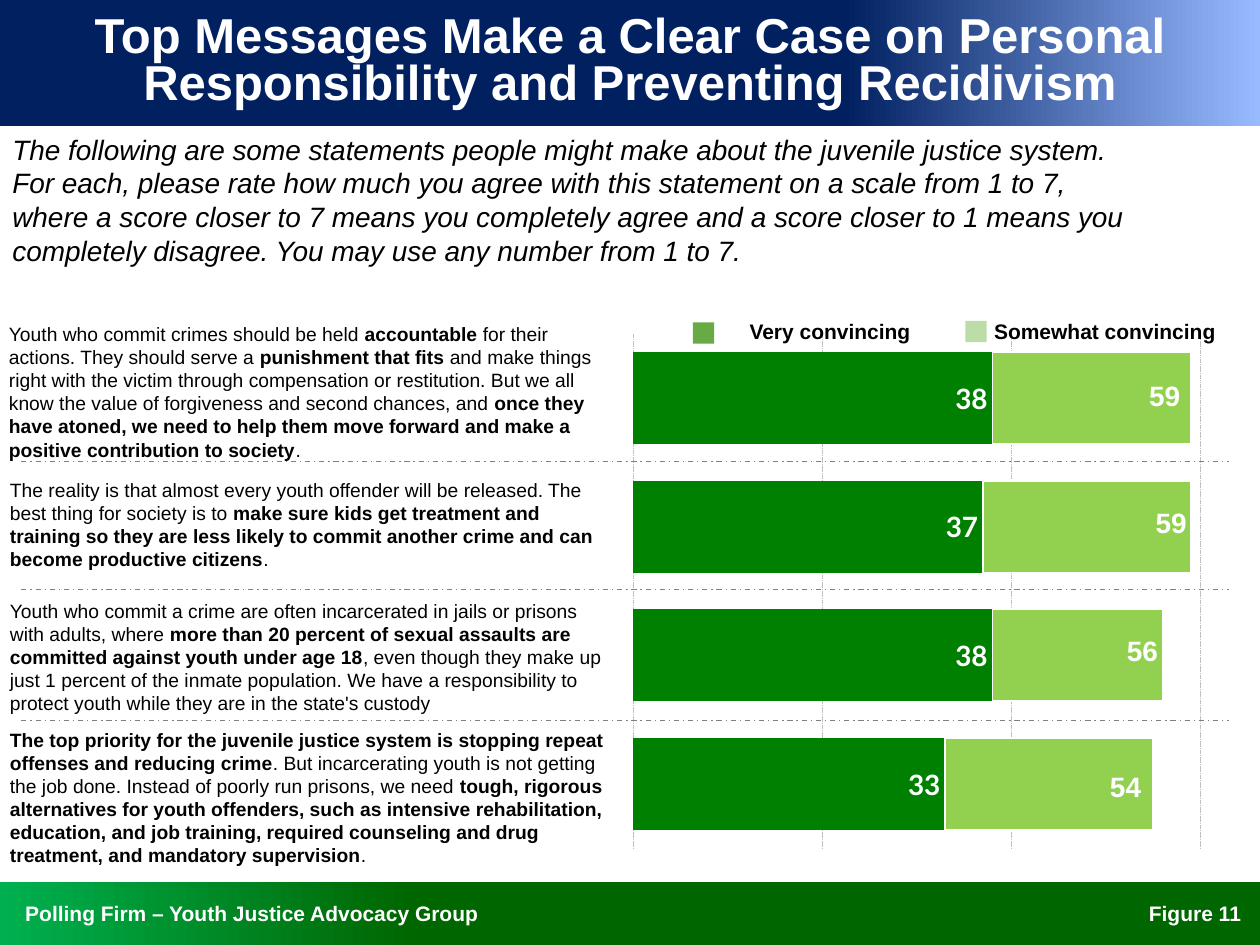
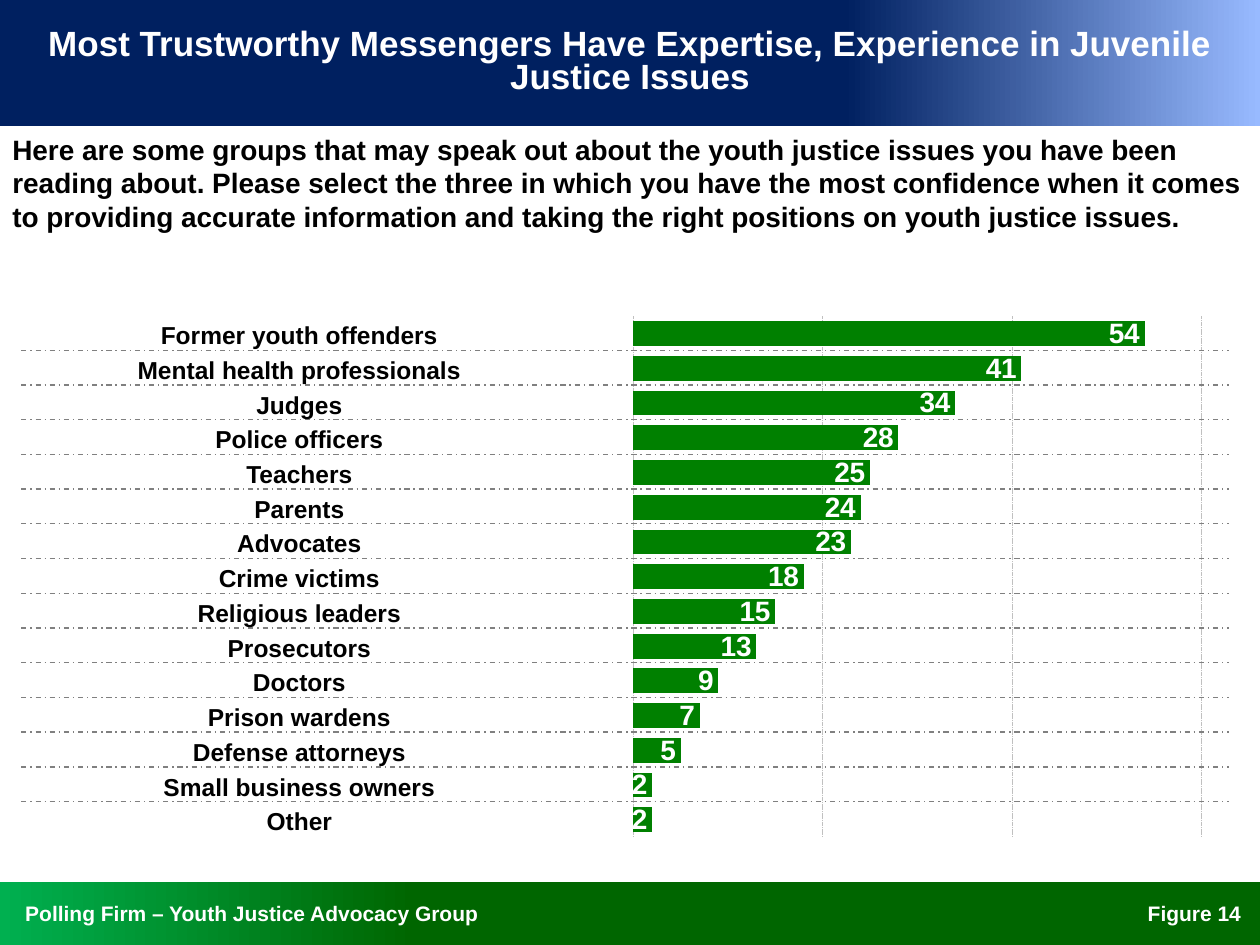
"""Build two survey result slides on youth justice messages and messengers."""
from lxml import etree
from pptx import Presentation
from pptx.chart.data import CategoryChartData
from pptx.dml.color import RGBColor
from pptx.enum.chart import XL_CHART_TYPE, XL_LABEL_POSITION
from pptx.enum.dml import MSO_LINE
from pptx.enum.shapes import MSO_CONNECTOR, MSO_SHAPE
from pptx.enum.text import MSO_ANCHOR, MSO_AUTO_SIZE, PP_ALIGN
from pptx.oxml import parse_xml
from pptx.oxml.ns import nsdecls, qn
from pptx.util import Cm, Pt

RECTANGLE = MSO_SHAPE.RECTANGLE
STRAIGHT = MSO_CONNECTOR.STRAIGHT
STACKED_BARS = XL_CHART_TYPE.BAR_STACKED
INSIDE_END = XL_LABEL_POSITION.INSIDE_END
DASH_DOT, SHORT_DASH = MSO_LINE.DASH_DOT, MSO_LINE.SQUARE_DOT
TOP, MIDDLE = MSO_ANCHOR.TOP, MSO_ANCHOR.MIDDLE
LEFT, CENTER, RIGHT = PP_ALIGN.LEFT, PP_ALIGN.CENTER, PP_ALIGN.RIGHT
NO_FIT = MSO_AUTO_SIZE.NONE

FONT = "Arial"
WHITE, BLACK, GREY, GRID_GREY = "FFFFFF", "000000", "808080", "C0C0C0"
GREEN, LIGHT_GREEN = "008000", "92D050"
WIDTH, HEIGHT = 25.4, 19.05
TITLE_HEIGHT, FOOTER_TOP, FOOTER_HEIGHT = 2.54, 17.78, 1.27
ROW_PITCH = 0.7

color = RGBColor.from_string


def write(shape, marked, size, hex_color, align=LEFT, inset=(0, 0), anchor=MIDDLE, italic=False):
    """Fill a shape with one paragraph; asterisks switch bold on and off."""
    frame = shape.text_frame
    frame.word_wrap = True
    frame.auto_size = NO_FIT
    frame.vertical_anchor = anchor
    frame.margin_left = frame.margin_right = Cm(inset[0])
    frame.margin_top = frame.margin_bottom = Cm(inset[1])
    para = frame.paragraphs[0]
    para.alignment = align
    for index, part in enumerate(marked.split("*")):
        if part:
            span = para.add_run()
            span.text = part
            span.font.name = FONT
            span.font.size = Pt(size)
            span.font.bold = index % 2 == 1
            span.font.italic = italic
            span.font.color.rgb = color(hex_color)
    return para


def add_rectangle(page, left, top, width, height):
    """Add a rectangle without outline or shadow."""
    shape = page.shapes.add_shape(RECTANGLE, Cm(left), Cm(top), Cm(width), Cm(height))
    shape.shadow.inherit = False
    shape.line.fill.background()
    return shape


slides = [
    {
        "title": "Top Messages Make a Clear Case on Personal Responsibility and Preventing Recidivism",
        "title size": 28,
        "figure": "Figure 11",
        "intro": "The following are some statements people might make about the juvenile justice system. "
                 "For each, please rate how much you agree with this statement on a scale from 1 to 7, "
                 "where a score closer to 7 means you completely agree and a score closer to 1 means you "
                 "completely disagree. You may use any number from 1 to 7.",
        "intro width": 23,
        "italic": True,
        "chart area": (10.97, 6.7, 14.27, 12.42),
        "plot": (0.126, 0.002, 0.801, 0.836),
        "label font": "Lato",
        "series": [(33, 38, 37, 38), (22, 18, 22, 21)],
        "dividers": [9.3, 11.89, 14.53],
    },
    {
        "title": "Most Trustworthy Messengers Have Expertise, Experience in Juvenile Justice Issues",
        "title size": 20,
        "figure": "Figure 14",
        "intro": "*Here are some groups that may speak out about the youth justice issues you have been "
                 "reading about. Please select the three in which you have the most confidence when it comes "
                 "to providing accurate information and taking the right positions on youth justice issues.*",
        "intro width": 25.42,
        "italic": False,
        "chart area": (10.95, 6.35, 14.3, 12.55),
        "plot": (0.127, 0.002, 0.801, 0.837),
        "label font": FONT,
        "series": [(2, 2, 5, 7, 9, 13, 15, 18, 23, 24, 25, 28, 34, 41, 54)],
        "dividers": [7.06 + ROW_PITCH * row for row in range(14)],
    },
]

deck = Presentation()
deck.slide_width, deck.slide_height = Cm(WIDTH), Cm(HEIGHT)
layout = deck.slide_layouts[5]
pages = [deck.slides.add_slide(layout) for slide in slides]

bands = [
    (FOOTER_TOP, FOOTER_HEIGHT, "00B050", "006600", 0),
    (0, TITLE_HEIGHT, "98BAFF", "002060", 180),
]
for top, height, start, end, angle in bands:
    band = add_rectangle(pages[0], 0, top, WIDTH, height)
    band.fill.gradient()
    band.fill.gradient_angle = angle
    for stop, hex_color, position in zip(band.fill.gradient_stops, (start, end), (0, 0.33)):
        stop.color.rgb = color(hex_color)
        stop.position = position
    layout.shapes.element.append(band.element)

footer = pages[0].shapes.add_textbox(0, Cm(FOOTER_TOP), Cm(17.58), Cm(FOOTER_HEIGHT))
write(footer, "*Polling Firm – Youth Justice Advocacy Group*", 12, WHITE, inset=(0.51, 0.13))
layout.shapes.element.append(footer.element)

for page, slide in zip(pages, slides):
    title = page.shapes.title
    title.left, title.top, title.width, title.height = 0, 0, Cm(WIDTH), Cm(TITLE_HEIGHT)
    heading = write(title, f"*{slide['title']}*", slide["title size"], WHITE, CENTER, (0.51, 0.13))
    heading.line_spacing = 0.8

    chart_data = CategoryChartData()
    chart_data.categories = [str(number + 1) for number in range(len(slide["series"][0]))]
    for number, values in enumerate(slide["series"], 1):
        chart_data.add_series(f"Series {number}", values)
    chart = page.shapes.add_chart(STACKED_BARS, *map(Cm, slide["chart area"]), chart_data).chart
    chart.has_legend = False
    chart.has_title = False
    chart.font.name = "Lato"
    chart.font.size = Pt(17.6)
    chart.font.color.rgb = color(BLACK)
    chart.category_axis.visible = False
    axis = chart.value_axis
    axis.visible = False
    axis.minimum_scale, axis.maximum_scale, axis.major_unit = 0, 60, 20
    axis.has_major_gridlines = True
    grid = axis.major_gridlines.format.line
    grid.color.rgb = color(GRID_GREY)
    grid.width = Pt(0.25)
    grid.dash_style = SHORT_DASH

    plot = chart.plots[0]
    plot.gap_width, plot.overlap, plot.vary_by_categories = 40, 100, False
    for series, hex_color in zip(plot.series, (GREEN, LIGHT_GREEN)):
        series.format.fill.solid()
        series.format.fill.fore_color.rgb = color(hex_color)
        if hex_color == LIGHT_GREEN:
            series.format.line.color.rgb = color(WHITE)
            series.format.line.width = Pt(1)
    labels = plot.series[0].data_labels
    labels.show_value = True
    labels.position = INSIDE_END
    labels.font.name = slide["label font"]
    labels.font.size = Pt(16)
    labels.font.bold = True
    labels.font.color.rgb = color(WHITE)

    plot_area = chart.element.find(".//" + qn("c:plotArea"))
    for automatic in plot_area.findall(qn("c:layout")):
        plot_area.remove(automatic)
    sizes = "".join(f'<c:{key} val="{value}"/>' for key, value in zip("xywh", slide["plot"]))
    plot_area.insert(0, parse_xml(
        f'<c:layout {nsdecls("c")}><c:manualLayout><c:layoutTarget val="inner"/>'
        f'<c:xMode val="edge"/><c:yMode val="edge"/>{sizes}</c:manualLayout></c:layout>'))

    figure = page.shapes.add_textbox(Cm(21.4), Cm(FOOTER_TOP), Cm(4), Cm(FOOTER_HEIGHT))
    write(figure, f"*{slide['figure']}*", 12, WHITE, RIGHT, (0.38, 0.13))

    intro = page.shapes.add_textbox(0, Cm(TITLE_HEIGHT), Cm(slide["intro width"]), Cm(3.5))
    write(intro, slide["intro"], 16, BLACK, inset=(0.25, 0.13), anchor=TOP, italic=slide["italic"])

    for height in slide["dividers"]:
        divider = page.shapes.add_connector(STRAIGHT, Cm(0.43), Cm(height), Cm(24.77), Cm(height))
        divider.line.color.rgb = color(GREY)
        divider.line.width = Pt(0.75)
        divider.line.dash_style = DASH_DOT
        etree.SubElement(divider.element.spPr, qn("a:effectLst"))

messages_page, messengers_page = pages

legend = [
    ("Very convincing", "68AA45", 13.97, 6.5, 15.11),
    ("Somewhat convincing", "BCDDA8", 19.46, 6.47, 20.04),
]
for name, hex_color, swatch_left, swatch_top, text_left in legend:
    swatch = add_rectangle(messages_page, swatch_left, swatch_top, 0.43, 0.43)
    swatch.fill.solid()
    swatch.fill.fore_color.rgb = color(hex_color)
    box = messages_page.shapes.add_textbox(Cm(text_left), Cm(6.43), Cm(5), Cm(0.51))
    write(box, f"*{name}*", 12, BLACK)

statements = [
    (0.18, 6.5, 2.79,
     "Youth who commit crimes should be held *accountable* for their actions. They should serve a "
     "*punishment that fits* and make things right with the victim through compensation or restitution. "
     "But we all know the value of forgiveness and second chances, and *once they have atoned, we need to "
     "help them move forward and make a positive contribution to society*."),
    (0.2, 9.63, 1.88,
     "The reality is that almost every youth offender will be released. The best thing for society is to "
     "*make sure kids get treatment and training so they are less likely to commit another crime and can "
     "become productive citizens*."),
    (0.2, 12.07, 2.34,
     "Youth who commit a crime are often incarcerated in jails or prisons with adults, where "
     "*more than 20 percent of sexual assaults are committed against youth under age 18*, even though they "
     "make up just 1 percent of the inmate population. We have a responsibility to protect youth while "
     "they are in the state's custody"),
    (0.2, 14.68, 2.79,
     "*The top priority for the juvenile justice system is stopping repeat offenses and reducing crime*. "
     "But incarcerating youth is not getting the job done. Instead of poorly run prisons, we need "
     "*tough, rigorous alternatives for youth offenders, such as intensive rehabilitation, education, and "
     "job training, required counseling and drug treatment, and mandatory supervision*."),
]
for left, top, height, statement in statements:
    box = messages_page.shapes.add_textbox(Cm(left), Cm(top), Cm(12.07), Cm(height))
    write(box, statement, 11, BLACK)

totals = [(59, 22.98, 7.62), (59, 23.11, 10.19), (56, 22.53, 12.78), (54, 22.19, 15.52)]
for total, left, top in totals:
    box = messages_page.shapes.add_textbox(Cm(left), Cm(top), Cm(1), Cm(0.68))
    write(box, f"*{total}*", 16, WHITE, CENTER)

messengers = [
    "Former youth offenders", "Mental health professionals", "Judges", "Police officers", "Teachers",
    "Parents", "Advocates", "Crime victims", "Religious leaders", "Prosecutors", "Doctors",
    "Prison wardens", "Defense attorneys", "Small business owners", "Other",
]
for row, messenger in enumerate(messengers):
    box = messengers_page.shapes.add_textbox(0, Cm(6.45 + ROW_PITCH * row), Cm(12.07), Cm(0.6))
    write(box, f"*{messenger}*", 14, BLACK, CENTER)

deck.save("out.pptx")
